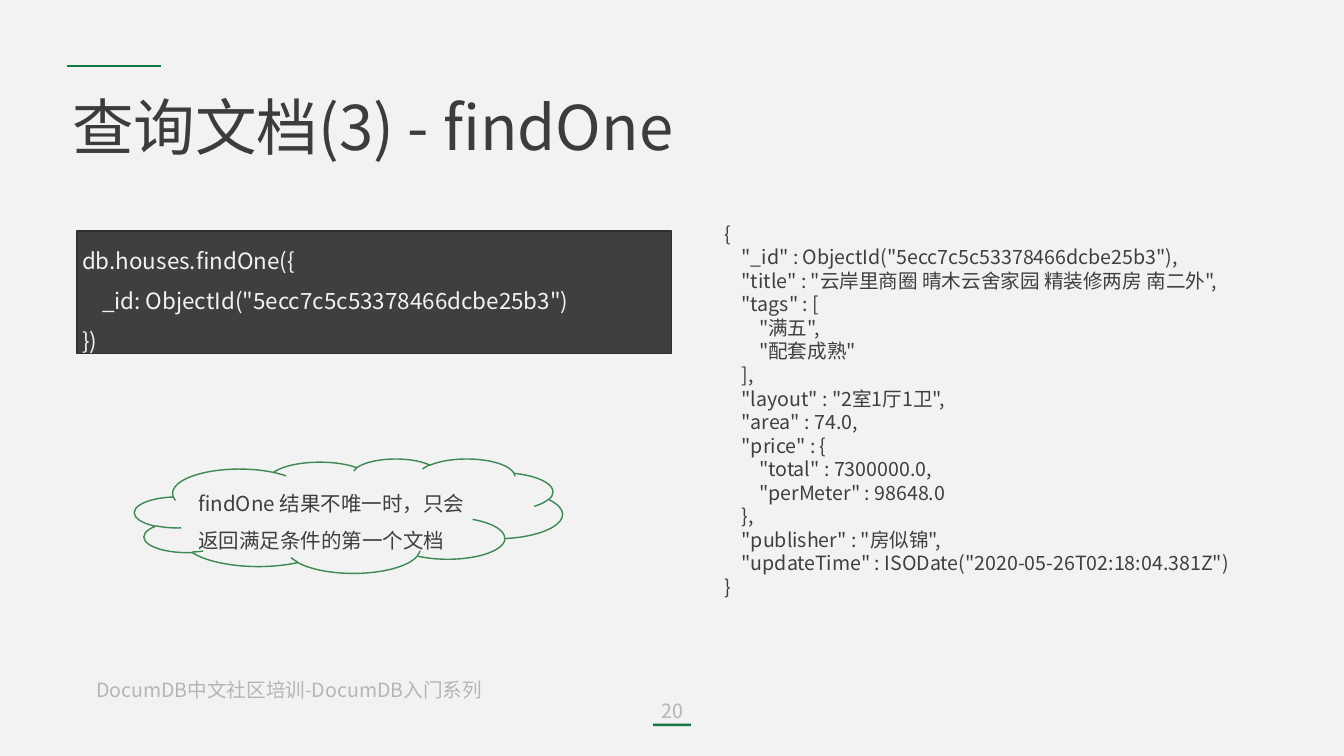
from lxml.etree import SubElement
from pptx import Presentation
from pptx.dml.color import RGBColor
from pptx.enum.shapes import MSO_CONNECTOR, MSO_SHAPE
from pptx.enum.text import MSO_ANCHOR, PP_ALIGN
from pptx.oxml.ns import qn
from pptx.util import Inches, Pt

WIDE, HIGH = 26.67, 15
FONT = "Noto Sans CJK SC"
GREEN, DARK, PALE, GREY = "137743", "3F3F3F", "F2F2F2", "B5B5B5"

QUERY = '''db.houses.findOne({
    _id: ObjectId("5ecc7c5c53378466dcbe25b3")
})'''

RESULT = '''{
    "_id" : ObjectId("5ecc7c5c53378466dcbe25b3"),
    "title" : "云岸里商圈 晴木云舍家园 精装修两房 南二外",
    "tags" : [
        "满五",
        "配套成熟"
    ],
    "layout" : "2室1厅1卫",
    "area" : 74.0,
    "price" : {
        "total" : 7300000.0,
        "perMeter" : 98648.0
    },
    "publisher" : "房似锦",
    "updateTime" : ISODate("2020-05-26T02:18:04.381Z")
}'''


def color(code):
    return RGBColor.from_string(code)


def place(box):
    return [Inches(side) for side in box]


def write(shape, text, size, ink, font=FONT, align=PP_ALIGN.LEFT,
          space=None, anchor=MSO_ANCHOR.TOP):
    frame = shape.text_frame
    frame.text = text
    frame.word_wrap = True
    frame.vertical_anchor = anchor
    for para in frame.paragraphs:
        para.alignment = align
        para.line_spacing = space
        for run in para.runs:
            run.font.size = Pt(size)
            run.font.name = font
            run.font.color.rgb = color(ink)
            SubElement(run.font._element, qn("a:ea"), typeface=font)


def label(slide, box, text, size, ink, **style):
    write(slide.shapes.add_textbox(*place(box)), text, size, ink, **style)


def panel(slide, kind, box, fill, edge=None):
    shape = slide.shapes.add_shape(kind, *place(box))
    shape.shadow.inherit = False
    shape.fill.solid()
    shape.fill.fore_color.rgb = color(fill)
    if edge:
        shape.line.color.rgb = color(edge)
        shape.line.width = Pt(2)
    else:
        shape.line.fill.background()
    return shape


def header(slide, box, text):
    left, top, wide, high = box
    # Accent line above the title
    rule_y = top - 0.23
    rule = slide.shapes.add_connector(
        MSO_CONNECTOR.STRAIGHT, *place((left, rule_y, left + 1.86, rule_y)))
    rule.line.color.rgb = color(GREEN)
    rule.line.width = Pt(3.25)
    SubElement(rule._element.spPr, qn("a:effectLst"))
    # Title
    title = slide.shapes.title
    title.left, title.top, title.width, title.height = place(box)
    write(title, text, 88, "3C3C3C", anchor=MSO_ANCHOR.MIDDLE)


def query(slide, box):
    block = panel(slide, MSO_SHAPE.RECTANGLE, box, DARK, "2F2F2F")
    write(block, QUERY, 32, PALE, space=1.5)


def note(slide, box, text):
    cloud = panel(slide, MSO_SHAPE.CLOUD, box, PALE, "3E8853")
    write(cloud, text, 29.3, DARK, space=1.5)


def footer(slide, box, text, page):
    left, top, wide, high = box
    label(slide, (left, top, 8.75, high), text, 28, GREY)
    # Page number over a short green bar
    label(slide, (12.53, top + 0.42, 1.62, high), page, 28, GREY,
          font="Noto Sans CJK TC", align=PP_ALIGN.CENTER)
    bar = 0.75
    panel(slide, MSO_SHAPE.RECTANGLE,
          ((WIDE - bar) / 2, top + 0.96, bar, 0.05), GREEN)


def main():
    deck = Presentation()
    deck.slide_width, deck.slide_height = Inches(WIDE), Inches(HIGH)
    slide = deck.slides.add_slide(deck.slide_layouts[5])
    slide.background.fill.solid()
    slide.background.fill.fore_color.rgb = color(PALE)

    footer(slide, (1.81, 13.4, 23.05, 0.57),
           "DocumDB 中文社区培训-DocumDB 入门系列".replace(" ", ""), "20")
    header(slide, (1.33, 1.54, 24, 1.9), "查询文档(3) - findOne")
    query(slide, (1.53, 4.58, 11.8, 2.43))
    label(slide, (14.27, 4.35, 11.39, 7.64), RESULT, 28, DARK)
    note(slide, (2.67, 9.1, 8.49, 2.27),
         "findOne 结果不唯一时，只会返回满足条件的第一个文档")
    deck.save("out.pptx")


if __name__ == "__main__":
    main()
